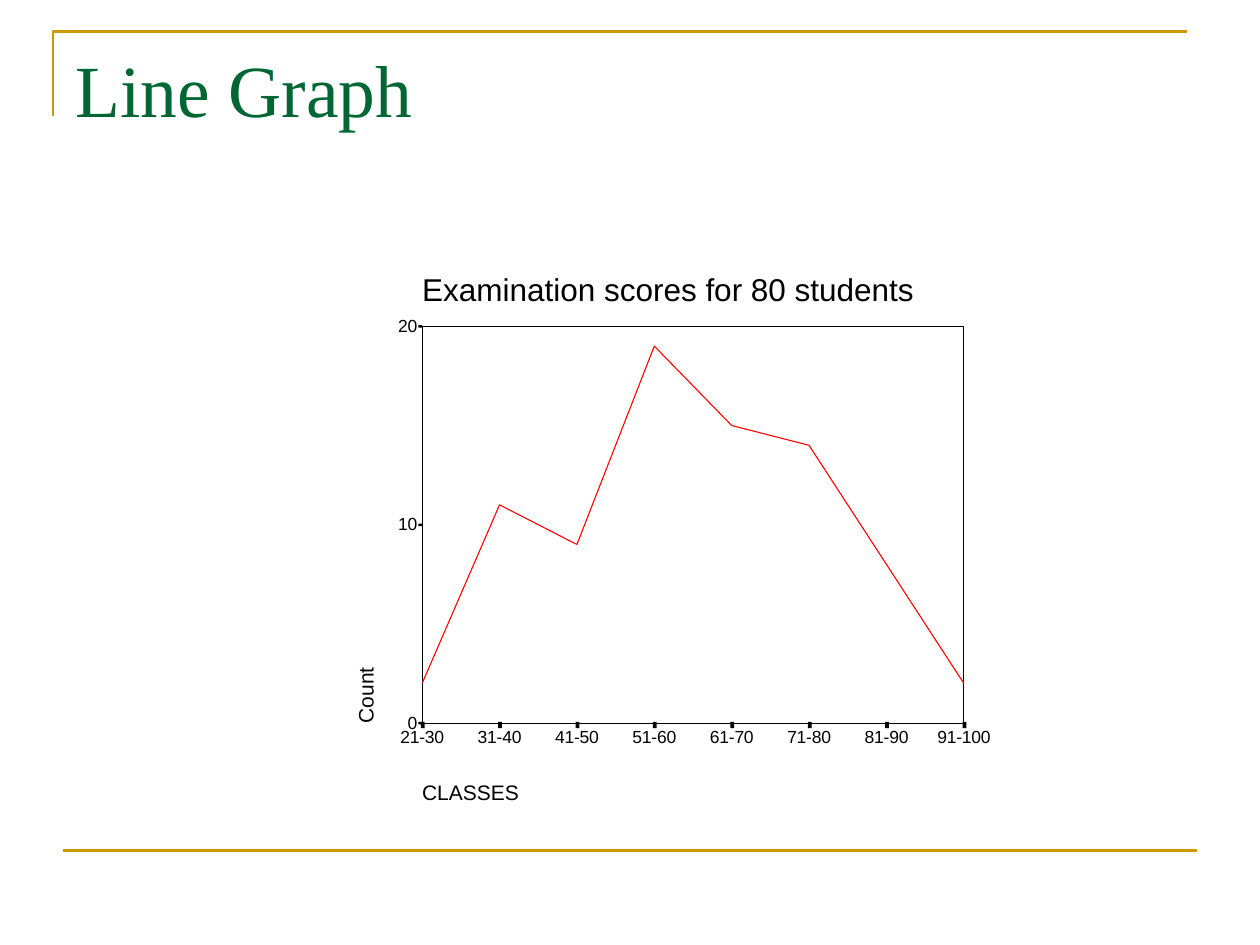
from lxml import etree
from pptx import Presentation
from pptx.chart.data import CategoryChartData
from pptx.dml.color import RGBColor
from pptx.enum.chart import XL_CHART_TYPE, XL_MARKER_STYLE, XL_TICK_MARK
from pptx.enum.shapes import MSO_CONNECTOR, MSO_SHAPE
from pptx.enum.text import MSO_ANCHOR, PP_ALIGN
from pptx.oxml import parse_xml
from pptx.oxml.ns import nsdecls, qn
from pptx.util import Inches, Pt

LINE_CHART = XL_CHART_TYPE.LINE
NO_MARKER = XL_MARKER_STYLE.NONE
TICK_NONE = XL_TICK_MARK.NONE
STRAIGHT, RECTANGLE = MSO_CONNECTOR.STRAIGHT, MSO_SHAPE.RECTANGLE
TOP, LEFT = MSO_ANCHOR.TOP, PP_ALIGN.LEFT

GOLD = RGBColor(0xCC, 0x99, 0x00)
GREEN = RGBColor(0x00, 0x66, 0x33)
BLACK = RGBColor(0x00, 0x00, 0x00)
RED = RGBColor(0xFF, 0x00, 0x00)

RULE_WIDTH = Pt(1.5)
THIN_WIDTH = Pt(0.63)

STUDENTS_PER_CLASS = {
    "21-30": 2, "31-40": 11, "41-50": 9, "51-60": 19,
    "61-70": 15, "71-80": 14, "81-90": 8, "91-100": 2,
}
COUNT_MAX, COUNT_STEP = 20, 10
CHART_BOX = (2.52, 2, 5.61, 4.49)
PLOT_BOX = (3.35, 2.59, 4.3, 3.15)


class SlideBuilder:
    """Draws elements on one slide in a shared style."""

    title_font = "Times New Roman"
    body_font = "Arial"

    def __init__(self, slide):
        self.slide = slide
        self.shapes = slide.shapes

    def add_run(self, paragraph, text, size, font, color):
        run = paragraph.add_run()
        run.text = text
        run.font.size = Pt(size)
        run.font.name = font
        run.font.color.rgb = color

    def title(self, text, left, top, width, height):
        title = self.shapes.title
        title.left, title.top = Inches(left), Inches(top)
        title.width, title.height = Inches(width), Inches(height)
        title.text_frame.vertical_anchor = TOP
        paragraph = title.text_frame.paragraphs[0]
        paragraph.alignment = LEFT
        self.add_run(paragraph, text, 42, self.title_font, GREEN)

    def label(self, text, left, top, width, height, size, rotation=0):
        box = self.shapes.add_textbox(
            Inches(left), Inches(top), Inches(width), Inches(height))
        box.rotation = rotation
        frame = box.text_frame
        frame.word_wrap = False
        frame.margin_left = frame.margin_right = 0
        frame.margin_top = frame.margin_bottom = 0
        self.add_run(frame.paragraphs[0], text, size, self.body_font, BLACK)

    def rule(self, x1, y1, x2, y2):
        rule = self.shapes.add_connector(
            STRAIGHT, Inches(x1), Inches(y1), Inches(x2), Inches(y2))
        rule.line.color.rgb = GOLD
        rule.line.width = RULE_WIDTH
        etree.SubElement(rule._element.spPr, qn("a:effectLst"))

    def corner(self, *points):
        start, *rest = [(Inches(x), Inches(y)) for x, y in points]
        builder = self.shapes.build_freeform(*start)
        builder.add_line_segments(rest, close=False)
        corner = builder.convert_to_shape()
        corner.shadow.inherit = False
        corner.fill.background()
        corner.line.color.rgb = GOLD
        corner.line.width = RULE_WIDTH

    def tick(self, left, top, width, height):
        tick = self.shapes.add_shape(
            RECTANGLE, Inches(left), Inches(top), Inches(width), Inches(height))
        tick.shadow.inherit = False
        tick.fill.solid()
        tick.fill.fore_color.rgb = BLACK
        tick.line.fill.background()

    def ticks(self, plot_box, count_steps, class_steps):
        """Mark both axes with short, heavy ticks at equal gaps."""
        left, top, width, height = plot_box
        for step in range(count_steps + 1):
            self.tick(left - 0.03, top - 0.01 + step * height / count_steps,
                      0.03, 0.02)
        for step in range(class_steps + 1):
            self.tick(left - 0.01 + step * width / class_steps,
                      top + height - 0.01, 0.03, 0.05)

    def line_chart(self, series_name, values, chart_box, plot_box):
        data = CategoryChartData()
        data.categories = list(values)
        data.add_series(series_name, list(values.values()))
        chart = self.shapes.add_chart(
            LINE_CHART, *map(Inches, chart_box), data).chart
        chart.has_legend = False
        chart.has_title = False
        chart.font.name = self.body_font
        chart.font.size = Pt(10)
        chart.font.color.rgb = BLACK

        plot = chart.plots[0]
        plot.vary_by_categories = False
        series = plot.series[0]
        series.smooth = False
        series.marker.style = NO_MARKER
        series.format.line.color.rgb = RED
        series.format.line.width = THIN_WIDTH

        count_axis, class_axis = chart.value_axis, chart.category_axis
        count_axis.minimum_scale = 0
        count_axis.maximum_scale = COUNT_MAX
        count_axis.major_unit = COUNT_STEP
        for axis in (count_axis, class_axis):
            axis.has_major_gridlines = False
            axis.major_tick_mark = TICK_NONE
            axis.minor_tick_mark = TICK_NONE
            axis.format.line.color.rgb = BLACK
            axis.format.line.width = THIN_WIDTH
        self.start_line_on_axis(count_axis)
        self.frame_plot(chart, chart_box, plot_box)
        self.ticks(plot_box, COUNT_MAX // COUNT_STEP, len(values) - 1)

    def start_line_on_axis(self, value_axis):
        """Put the first and last categories on the plot's edges."""
        element = value_axis._element
        for old in element.findall(qn("c:crossBetween")):
            element.remove(old)
        element.find(qn("c:crosses")).addnext(parse_xml(
            f'<c:crossBetween {nsdecls("c")} val="midCat"/>'))

    def frame_plot(self, chart, chart_box, plot_box):
        """Fix the inner plot area in place and outline it."""
        area = chart._chartSpace.chart.plotArea
        for old in area.findall(qn("c:layout")):
            area.remove(old)
        left, top, width, height = chart_box
        x, y, w, h = plot_box
        fractions = {"x": (x - left) / width, "y": (y - top) / height,
                     "w": w / width, "h": h / height}
        sizes = "".join(f'<c:{key} val="{value:.4f}"/>'
                        for key, value in fractions.items())
        area.insert(0, parse_xml(
            f'<c:layout {nsdecls("c")}><c:manualLayout>'
            '<c:layoutTarget val="inner"/>'
            '<c:xMode val="edge"/><c:yMode val="edge"/>'
            f'{sizes}</c:manualLayout></c:layout>'))
        area.append(parse_xml(
            f'<c:spPr {nsdecls("c", "a")}><a:noFill/>'
            f'<a:ln w="{int(THIN_WIDTH)}"><a:solidFill>'
            f'<a:srgbClr val="{BLACK}"/></a:solidFill></a:ln></c:spPr>'))


def main():
    presentation = Presentation()
    presentation.slide_width = Inches(10)
    presentation.slide_height = Inches(7.5)
    title_only = presentation.slide_layouts[5]
    builder = SlideBuilder(presentation.slides.add_slide(title_only))

    builder.corner((0.42, 0.92), (0.42, 0.25), (9.42, 0.25))
    builder.rule(0.5, 6.75, 9.5, 6.75)
    builder.title("Line Graph", 0.5, 0.3, 9, 1.25)

    builder.line_chart("Count", STUDENTS_PER_CLASS, CHART_BOX, PLOT_BOX)
    builder.label("Examination scores for 80 students",
                  3.35, 2.14, 4.1, 0.36, 18)
    builder.label("CLASSES", 3.35, 6.19, 0.92, 0.24, 12)
    builder.label("Count", 2.65, 5.35, 0.54, 0.24, 12, rotation=270)

    presentation.save("out.pptx")


if __name__ == "__main__":
    main()
